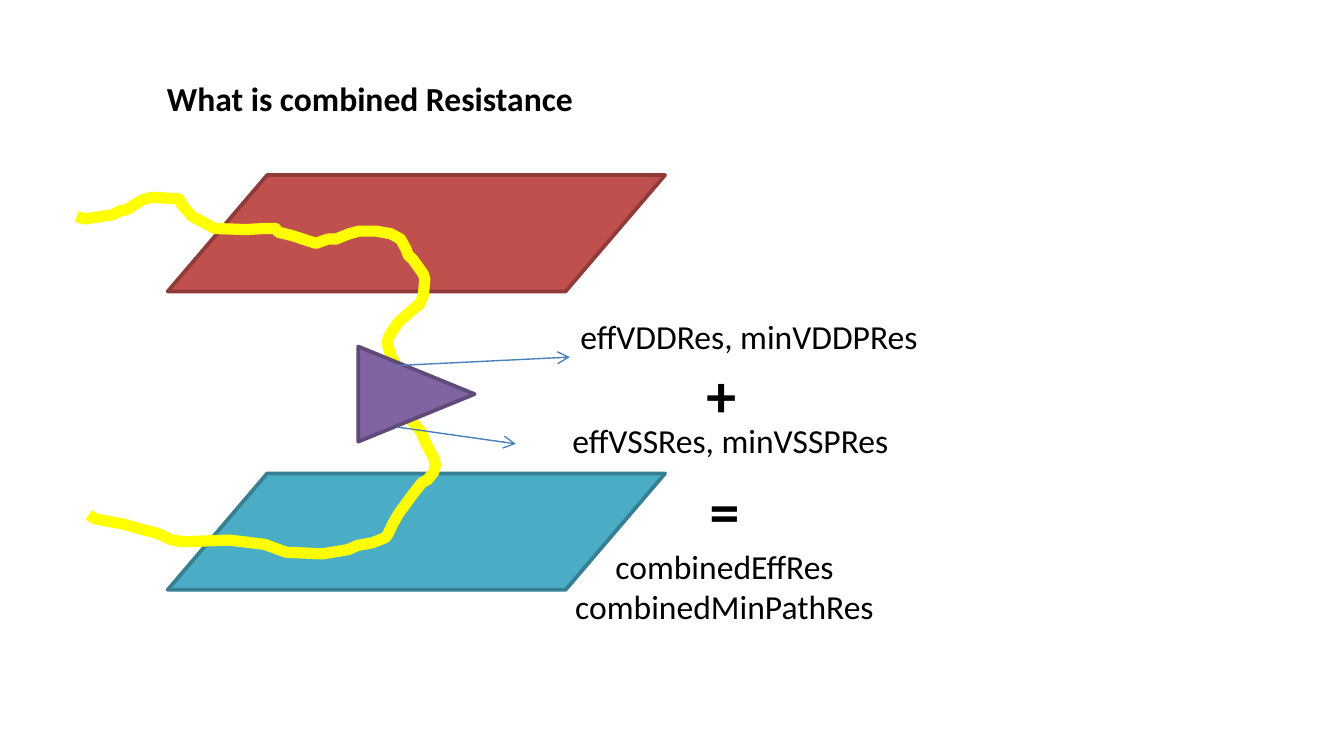
from pptx import Presentation
from pptx.dml.color import RGBColor
from pptx.enum.shapes import MSO_CONNECTOR, MSO_SHAPE
from pptx.enum.text import MSO_ANCHOR, MSO_AUTO_SIZE, PP_ALIGN
from pptx.oxml.ns import qn
from pptx.util import Cm, Pt
from lxml.etree import SubElement

BLACK = RGBColor(0x00, 0x00, 0x00)
RED, DARK_RED = RGBColor(0xC0, 0x50, 0x4D), RGBColor(0x8E, 0x3B, 0x39)
TEAL, DARK_TEAL = RGBColor(0x4B, 0xAC, 0xC6), RGBColor(0x37, 0x7F, 0x92)
PURPLE, DARK_PURPLE = RGBColor(0x80, 0x64, 0xA2), RGBColor(0x5F, 0x4A, 0x78)
YELLOW = RGBColor(0xFF, 0xFF, 0x00)
ARROW_BLUE = RGBColor(0x4B, 0x7E, 0xBC)

CURRENT_PATH = [
    (145, 409), (160, 414), (213, 406), (226, 399), (241, 396), (251, 389),
    (269, 378), (287, 373), (338, 376), (343, 386), (363, 409), (378, 417),
    (406, 432), (465, 434), (500, 432), (521, 432), (526, 439), (551, 445),
    (597, 460), (620, 452), (635, 452), (660, 442), (678, 437), (711, 437),
    (739, 442), (757, 452), (767, 470), (772, 483), (780, 490), (800, 518),
    (803, 528), (800, 559), (792, 577), (787, 579), (752, 610), (734, 638),
    (732, 650), (739, 673), (749, 691), (770, 716), (780, 726), (777, 752),
    (772, 772), (775, 792), (795, 815), (805, 838), (820, 866), (823, 879),
    (820, 892), (808, 907), (798, 912), (782, 932), (754, 970), (742, 991),
    (734, 1008), (729, 1016), (704, 1026), (676, 1031), (658, 1039),
    (610, 1047), (541, 1044), (500, 1029), (434, 1021), (348, 1024),
    (325, 1021), (297, 1008), (269, 1001), (234, 991), (191, 983),
    (178, 980), (168, 973),
]


def write(paragraph, text, *, size=18, bold=False, align=PP_ALIGN.LEFT):
    """Put formatted text into a paragraph."""
    paragraph.alignment = align
    run = paragraph.add_run()
    run.text = text
    run.font.name = "Calibri"
    run.font.size = Pt(size)
    run.font.bold = bold
    run.font.color.rgb = BLACK


def add_label(slide, left, top, width, height, *lines):
    """Add a text box with one paragraph per (text, format) pair."""
    label = slide.shapes.add_textbox(Cm(left), Cm(top), Cm(width), Cm(height))
    frame = label.text_frame
    frame.word_wrap = False
    frame.auto_size = MSO_AUTO_SIZE.SHAPE_TO_FIT_TEXT
    for index, (text, style) in enumerate(lines):
        write(frame.add_paragraph() if index else frame.paragraphs[0], text, **style)


def set_title(slide, text, left, top, width, height):
    """Move the title placeholder and fill it."""
    title = slide.shapes.title
    title.left, title.top = Cm(left), Cm(top)
    title.width, title.height = Cm(width), Cm(height)
    frame = title.text_frame
    frame.word_wrap = False
    frame.auto_size = MSO_AUTO_SIZE.NONE
    frame.vertical_anchor = MSO_ANCHOR.TOP
    write(frame.paragraphs[0], text, bold=True)


def add_part(slide, preset, left, top, width, height, fill, outline, rotation=0):
    """Add a filled and outlined circuit part."""
    part = slide.shapes.add_shape(preset, Cm(left), Cm(top), Cm(width), Cm(height))
    part.rotation = rotation
    part.shadow.inherit = False
    part.fill.solid()
    part.fill.fore_color.rgb = fill
    part.line.color.rgb = outline
    part.line.width = Pt(2)


def add_wire(slide, points):
    """Draw an open wire through points given in hundredths of a centimetre."""
    builder = slide.shapes.build_freeform(*points[0], scale=Cm(0.01))
    builder.add_line_segments(points[1:], close=False)
    wire = builder.convert_to_shape()
    wire.shadow.inherit = False
    wire.fill.background()
    wire.line.color.rgb = YELLOW
    wire.line.width = Pt(6)


def add_arrow(slide, *ends):
    """Draw a thin arrow between two points."""
    arrow = slide.shapes.add_connector(MSO_CONNECTOR.STRAIGHT, *map(Cm, ends))
    arrow.line.color.rgb = ARROW_BLUE
    arrow.line.width = Pt(0.75)
    SubElement(arrow.line._get_or_add_ln(), qn("a:tailEnd"), type="arrow")
    SubElement(arrow._element.spPr, qn("a:effectLst"))


def main():
    """Build the combined resistance slide."""
    deck = Presentation()
    deck.slide_width, deck.slide_height = Cm(25.4), Cm(14.29)
    slide = deck.slides.add_slide(deck.slide_layouts[5])
    set_title(slide, "What is combined Resistance", 2.9, 1.35, 8.26, 1.03)

    for top, fill, outline in ((3.31, RED, DARK_RED), (8.95, TEAL, DARK_TEAL)):
        add_part(slide, MSO_SHAPE.FLOWCHART_DATA, 3.17, top, 9.4, 2.2, fill, outline)
    add_wire(slide, CURRENT_PATH)
    add_part(slide, MSO_SHAPE.ISOSCELES_TRIANGLE, 6.97, 6.35, 1.8, 2.2,
             PURPLE, DARK_PURPLE, rotation=90)

    add_arrow(slide, 7.49, 6.91, 10.77, 6.75)
    add_label(slide, 10.72, 5.84, 6.98, 1.03, ("effVDDRes, minVDDPRes", {}))
    add_arrow(slide, 7.49, 8.07, 9.75, 8.39)
    add_label(slide, 10.57, 7.82, 6.55, 1.03, ("effVSSRes, minVSSPRes", {}))

    operator = {"size": 32, "bold": True}
    centred = {"align": PP_ALIGN.CENTER}
    add_label(slide, 13.1, 6.63, 1.4, 1.62, ("+", operator))
    add_label(slide, 10.57, 8.84, 6.25, 3.17,
              ("=", operator | centred),
              ("combinedEffRes", centred),
              ("combinedMinPathRes", centred))
    deck.save("out.pptx")


if __name__ == "__main__":
    main()
